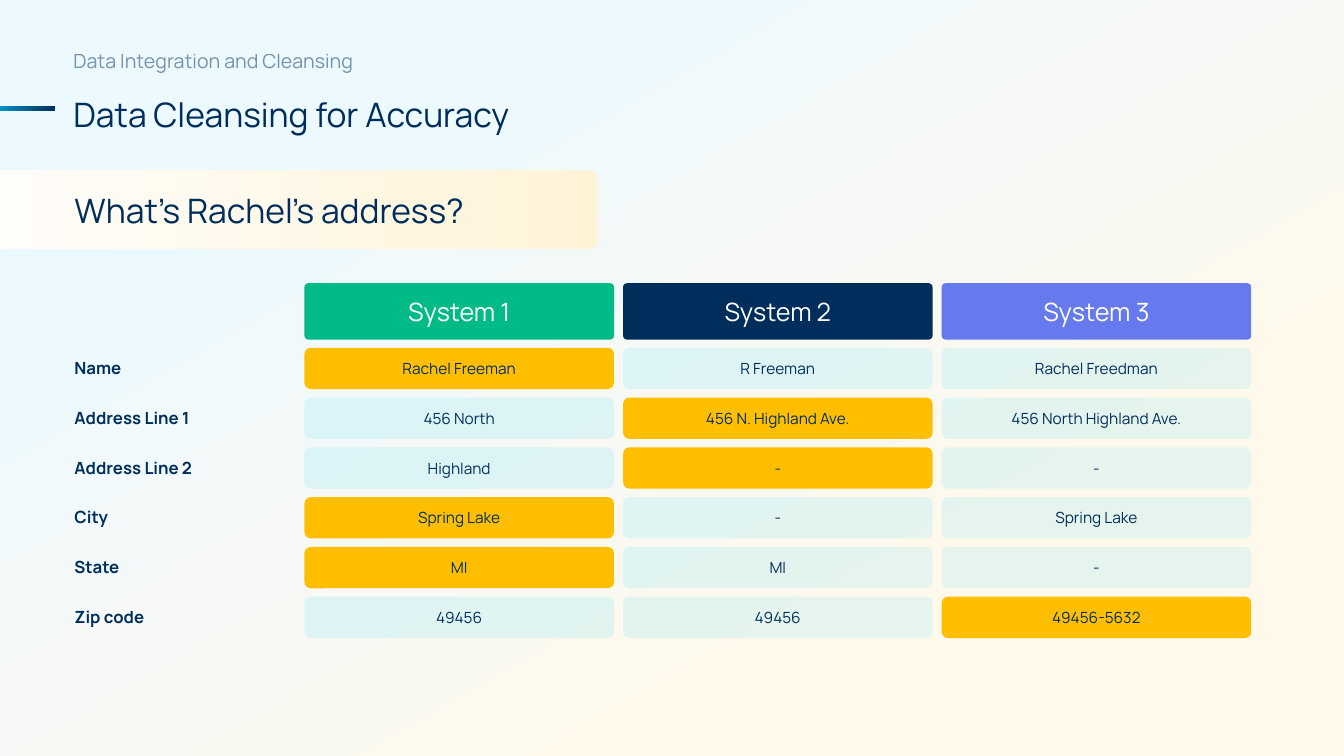
from lxml import etree
from pptx import Presentation
from pptx import util as u
from pptx.dml.color import RGBColor
from pptx.enum import shapes, text
from pptx.oxml import ns

NAVY, SKY, AMBER, WHITE = "002E5C", "00C9FF", "FFBF00", "FFFFFF"

SYSTEMS = [("System 1", "00BA88"), ("System 2", NAVY), ("System 3", "667AED")]
FIELDS = [
    ("Name", 0.72, ["Rachel Freeman", "R Freeman", "Rachel Freedman"], 0),
    ("Address Line 1", 1.41, ["456 North", "456 N. Highland Ave.", "456 North Highland Ave."], 1),
    ("Address Line 2", 1.44, ["Highland", "-", "-"], 1),
    ("City", 0.55, ["Spring Lake", "-", "Spring Lake"], 0),
    ("State", 0.66, ["MI", "MI", "-"], 0),
    ("Zip code", 0.93, ["49456", "49456", "49456-5632"], 2),
]


def rgb(value):
    return RGBColor.from_string(value)


def fade(element, opacity):
    colour = element.find(".//" + ns.qn("a:srgbClr"))
    etree.SubElement(colour, ns.qn("a:alpha"), val=str(opacity * 1000))


class SlideBuilder:
    """Draws styled shapes and text on the current slide."""

    font = "Manrope"

    def __init__(self, slide):
        self.slide = slide

    def add_words(self, shape, words, size, colour=NAVY, bold=False, opacity=100):
        paragraph = shape.text_frame.paragraphs[0]
        run = paragraph.add_run()
        run.text = words
        run.font.name = self.font
        run.font.size = u.Pt(size)
        run.font.bold = bold
        run.font.color.rgb = rgb(colour)
        if opacity < 100:
            fade(run._r, opacity)
        return paragraph

    def box(self, left, top, width, height, radius=0):
        kind = shapes.MSO_SHAPE.ROUNDED_RECTANGLE if radius else shapes.MSO_SHAPE.RECTANGLE
        shape = self.slide.shapes.add_shape(
            kind, u.Inches(left), u.Inches(top), u.Inches(width), u.Inches(height))
        if radius:
            shape.adjustments[0] = radius
        shape.shadow.inherit = False
        shape.line.fill.background()
        return shape

    def gradient(self, shape, stops, angle=0):
        shape.fill.gradient()
        shape.fill.gradient_angle = -angle % 360
        for stop, (position, colour) in zip(shape.fill.gradient_stops, stops):
            stop.position = position
            stop.color.rgb = rgb(colour)

    def cell(self, left, top, height, radius, words, size, fill, colour=NAVY, opacity=100):
        shape = self.box(left, top, 3.07, height, radius)
        shape.fill.solid()
        shape.fill.fore_color.rgb = rgb(fill)
        if opacity < 100:
            fade(shape._element.spPr, opacity)
        shape.text_frame.vertical_anchor = text.MSO_ANCHOR.MIDDLE
        self.add_words(shape, words, size, colour).alignment = text.PP_ALIGN.CENTER

    def text_box(self, left, top, width, height):
        shape = self.slide.shapes.add_textbox(
            u.Inches(left), u.Inches(top), u.Inches(width), u.Inches(height))
        shape.text_frame.word_wrap = True
        return shape

    def heading(self, top, width, words, size, opacity=100):
        shape = self.text_box(0.63, top, width, 0.51)
        paragraph = self.add_words(shape, words, size, opacity=opacity)
        paragraph.line_spacing = 1.3
        paragraph.space_before = paragraph.space_after = u.Pt(3)

    def label(self, top, width, words):
        shape = self.text_box(0.64, top, width, 0.3)
        shape.text_frame.word_wrap = False
        shape.text_frame.auto_size = text.MSO_AUTO_SIZE.SHAPE_TO_FIT_TEXT
        self.add_words(shape, words, 12, bold=True)

    def question(self, words):
        shape = self.text_box(0.64, 1.83, 5.38, 0.51)
        shape.text_frame.vertical_anchor = text.MSO_ANCHOR.MIDDLE
        self.add_words(shape, words, 24)


def main():
    presentation = Presentation()
    presentation.slide_width = u.Inches(13.33)
    presentation.slide_height = u.Inches(7.5)
    builder = SlideBuilder(presentation.slides.add_slide(presentation.slide_layouts[6]))

    backdrop = builder.box(0, -0.11, 13.33, 7.78)
    builder.gradient(backdrop, [(0.18, "ECF9FF"), (0.75, "FFF9EC")], 60)

    for column, (system, fill) in enumerate(SYSTEMS):
        left = 3.02 + 3.16 * column
        builder.cell(left, 2.81, 0.56, 0.07, system, 18, fill, WHITE)
        for row, (_, _, values, best) in enumerate(FIELDS):
            fill, opacity = (AMBER, 100) if column == best else (SKY, 10)
            builder.cell(left, 3.45 + 2.47 / 5 * row, 0.41, 0.15,
                         values[column], 11, fill, opacity=opacity)
    for row, (name, width, _, _) in enumerate(FIELDS):
        builder.label(3.5 + 2.47 / 5 * row, width, name)

    builder.heading(0.37, 5.58, "Data Integration and Cleansing", 14, opacity=50)
    builder.heading(0.76, 5.76, "Data Cleansing for Accuracy", 24)
    accent = builder.box(-0.31, 1.05, 0.86, 0.05)
    builder.gradient(accent, [(0, SKY), (1, NAVY)])
    banner = builder.box(-1.02, 1.69, 6.95, 0.78, 0.12)
    builder.gradient(banner, [(0, WHITE), (1, "FFF3D8")])
    builder.question("What’s Rachel’s address?")

    presentation.save("out.pptx")


if __name__ == "__main__":
    main()
